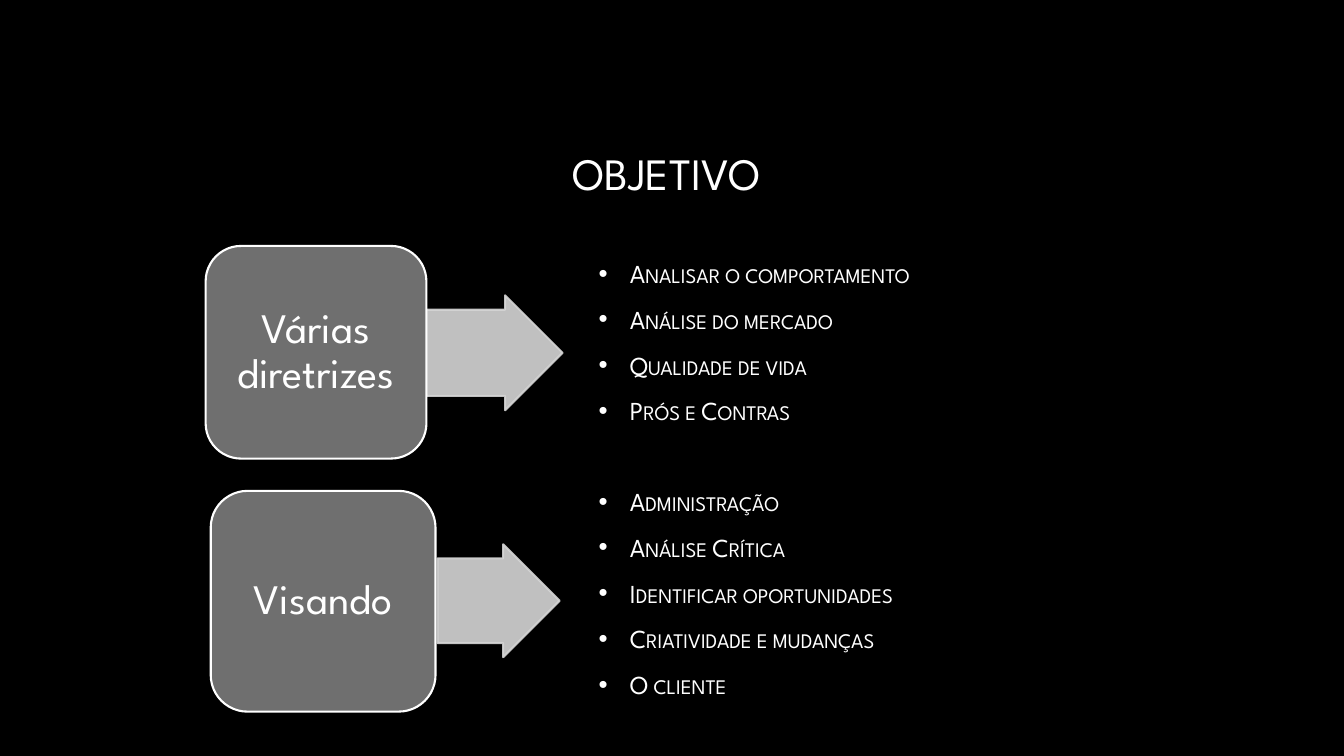
from lxml import etree
from pptx import Presentation
from pptx.dml.color import RGBColor
from pptx.enum.shapes import MSO_SHAPE
from pptx.enum.text import MSO_ANCHOR, PP_ALIGN
from pptx.oxml.ns import qn
from pptx.util import Inches, Pt

ROUNDED = MSO_SHAPE.ROUNDED_RECTANGLE
ARROW = MSO_SHAPE.RIGHT_ARROW
MIDDLE = MSO_ANCHOR.MIDDLE
CENTER = PP_ALIGN.CENTER
LEFT = PP_ALIGN.LEFT
FONT = "League Spartan"
COLORS = {
    name: RGBColor.from_string(value)
    for name, value in {
        "background": "000000",
        "text": "FFFFFF",
        "box": "6F6F6F",
        "arrow": "D5D5D5",
    }.items()
}

prs = Presentation()
prs.slide_width = Inches(13.33)
prs.slide_height = Inches(7.5)
slide = prs.slides.add_slide(prs.slide_layouts[6])
slide.background.fill.solid()
slide.background.fill.fore_color.rgb = COLORS["background"]


def percent(left, top, width, height):
    return [
        int(share * side / 100)
        for share, side in zip(
            (left, top, width, height), (prs.slide_width, prs.slide_height) * 2
        )
    ]


def write(frame, lines, size, align):
    frame.word_wrap = True
    frame.vertical_anchor = MIDDLE
    frame.text = "\n".join(lines)
    for paragraph in frame.paragraphs:
        paragraph.alignment = align
        for run in paragraph.runs:
            run.font.name = FONT
            run.font.size = Pt(size)
            run.font.color.rgb = COLORS["text"]


title = slide.shapes.add_textbox(*percent(9.38, 8.93, 81.25, 27.73))
write(title.text_frame, ["OBJETIVO "], 32, CENTER)

guidelines = [
    "Analisar o comportamento",
    "Análise do mercado",
    "Qualidade de vida",
    "Prós e Contras",
]
aims = [
    "Administração",
    "Análise Crítica",
    "Identificar oportunidades",
    "Criatividade e mudanças",
    "O cliente",
]
BULLET_SIZE = 18.5
SPACE_BEFORE = 4.5
LINE_PITCH = 31.9
topics = slide.shapes.add_textbox(*percent(43.81, 34.27, 30.53, 58.13))
write(topics.text_frame, guidelines + aims, BULLET_SIZE, LEFT)
for index, topic in enumerate(topics.text_frame.paragraphs):
    starts_aims = index == len(guidelines)
    topic.space_before = Pt(SPACE_BEFORE + LINE_PITCH * starts_aims)
    topic.space_after = Pt(6)
    topic.runs[0].font._element.set("cap", "small")
    properties = topic._p.get_or_add_pPr()
    properties.set("marL", str(Inches(0.31)))
    properties.set("indent", str(-Inches(0.31)))
    etree.SubElement(properties, qn("a:buFont")).set("typeface", "Arial")
    etree.SubElement(properties, qn("a:buChar")).set("char", "•")

groups = [
    ("Várias diretrizes", (15.3, 32.53, 16.43, 28.13), (31.73, 39.07, 10.13, 15.2)),
    ("Visando", (15.68, 64.93, 16.73, 29.2), (32.56, 72, 9.08, 14.93)),
]
for label, box_area, arrow_area in groups:
    arrow = slide.shapes.add_shape(ARROW, *percent(*arrow_area))
    arrow.adjustments[0] = 0.75
    arrow.adjustments[1] = 0.5
    box = slide.shapes.add_shape(ROUNDED, *percent(*box_area))
    for part, fill, line in ((arrow, "arrow", "arrow"), (box, "box", "text")):
        part.shadow.inherit = False
        part.fill.solid()
        part.fill.fore_color.rgb = COLORS[fill]
        part.line.color.rgb = COLORS[line]
        part.line.width = Pt(1.5)
    for color in arrow._element.spPr.iter(qn("a:srgbClr")):
        etree.SubElement(color, qn("a:alpha")).set("val", "90000")

    frame = box.text_frame
    write(frame, [label], 30, CENTER)
    frame.margin_left = frame.margin_right = Inches(0.12)
    frame.margin_top = frame.margin_bottom = Inches(0.06)
    frame.paragraphs[0].line_spacing = 0.9

prs.save("out.pptx")
